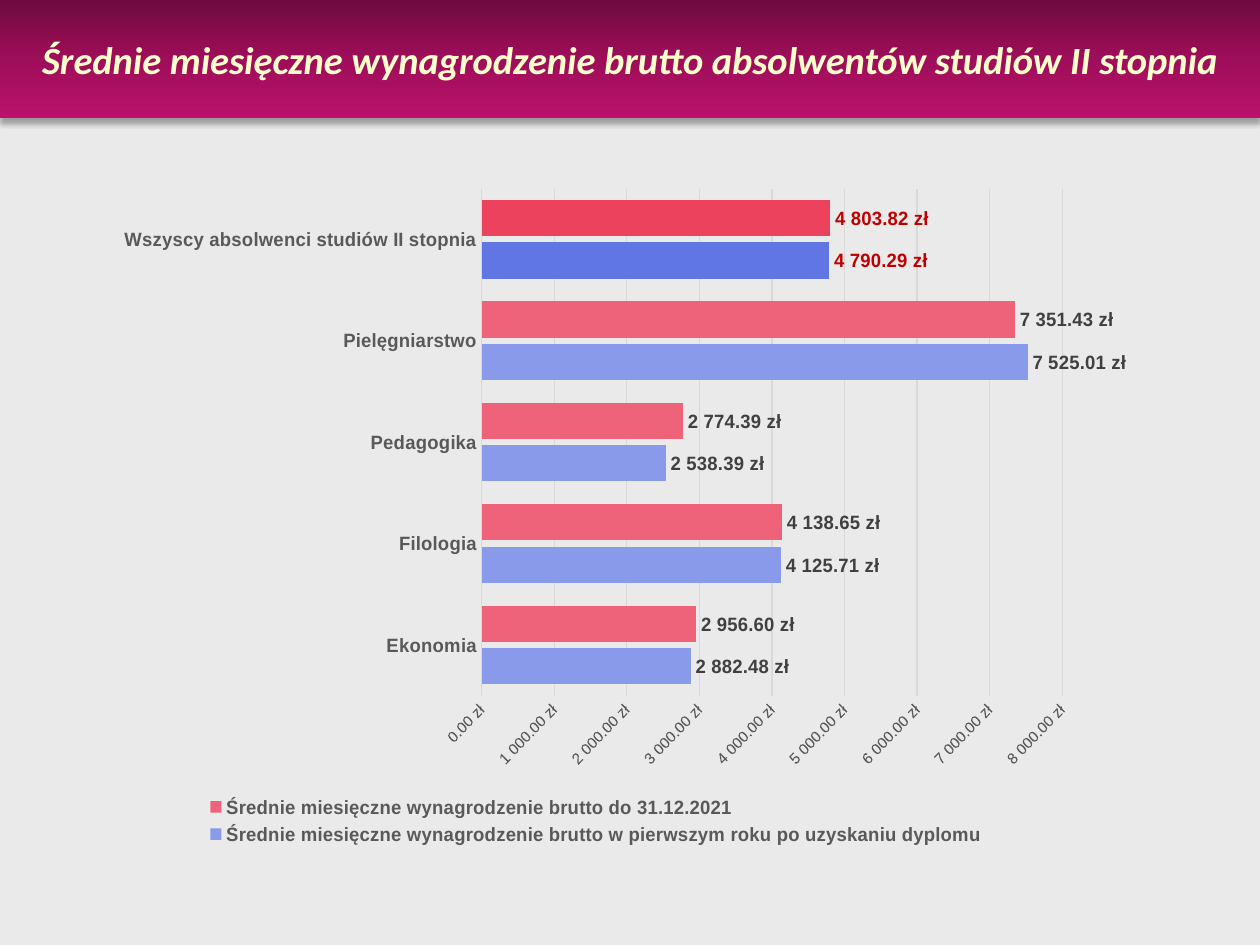
import pptx
import pptx.chart.data
import pptx.dml.color
import pptx.enum.chart
import pptx.enum.text
import pptx.oxml
import pptx.util
from pptx.util import Inches

COLORS = {
    "background": "EAEAEA",
    "banner_top": "6F0A3F",
    "banner_middle": "9E0E5A",
    "banner_bottom": "BB116B",
    "title": "FFFFCC",
    "axis_text": "595959",
    "grid": "D9D9D9",
    "label": "404040",
    "total_label": "C00000",
    "first_year": "8A9AEA",
    "first_year_total": "6076E2",
    "to_2021": "EF637A",
    "to_2021_total": "EC425E",
}
CURRENCY = '#\\ ##0.00\\ "zł"'
NAMESPACES = (
    'xmlns:a="http://schemas.openxmlformats.org/drawingml/2006/main" '
    'xmlns:c="http://schemas.openxmlformats.org/drawingml/2006/chart"'
)

TITLE = "Średnie miesięczne wynagrodzenie brutto absolwentów studiów II stopnia"
FIELDS = ["Ekonomia", "Filologia", "Pedagogika", "Pielęgniarstwo",
          "Wszyscy absolwenci studiów II stopnia"]
# name, values, colour key (the total bar uses the same key with "_total")
SALARIES = [
    ("Średnie miesięczne wynagrodzenie brutto w pierwszym roku po uzyskaniu dyplomu",
     [2882.48, 4125.71, 2538.39, 7525.01, 4790.29], "first_year"),
    ("Średnie miesięczne wynagrodzenie brutto do 31.12.2021",
     [2956.60, 4138.65, 2774.39, 7351.43, 4803.82], "to_2021"),
]


def rgb(key):
    return pptx.dml.color.RGBColor.from_string(COLORS[key])


def element(tag, attributes="", content=""):
    return pptx.oxml.parse_xml(f"<{tag} {NAMESPACES} {attributes}>{content}</{tag}>")


class SalarySlide:
    def __init__(self, presentation):
        self.slide = presentation.slides.add_slide(presentation.slide_layouts[5])
        background = self.slide.background.fill
        background.solid()
        background.fore_color.rgb = rgb("background")

    def style_font(self, font, size, color, bold=False, name="Arial"):
        font.name = name
        font.size = pptx.util.Pt(size)
        font.bold = bold
        font.color.rgb = rgb(color)

    def add_banner(self, text, left, top, width, height):
        """Turn the title placeholder into a gradient band with a shadow."""
        banner = self.slide.shapes.title
        banner.left, banner.top, banner.width, banner.height = left, top, width, height
        frame = banner.text_frame
        frame.text = text
        frame.word_wrap = True
        frame.auto_size = pptx.enum.text.MSO_AUTO_SIZE.NONE
        frame.vertical_anchor = pptx.enum.text.MSO_ANCHOR.MIDDLE
        paragraph = frame.paragraphs[0]
        paragraph.alignment = pptx.enum.text.PP_ALIGN.CENTER
        font = paragraph.runs[0].font
        self.style_font(font, 22, "title", bold=True, name="Calibri")
        font.italic = True

        stops = "".join(
            f'<a:gs pos="{position}"><a:srgbClr val="{COLORS[key]}"/></a:gs>'
            for position, key in [(0, "banner_top"), (50000, "banner_middle"),
                                  (100000, "banner_bottom")])
        properties = banner.element.spPr
        properties.append(element("a:prstGeom", 'prst="rect"', "<a:avLst/>"))
        properties.append(element(
            "a:gradFill", 'rotWithShape="1"',
            f'<a:gsLst>{stops}</a:gsLst><a:lin ang="5400000" scaled="0"/>'))
        blur, distance = pptx.util.Pt(3.5), pptx.util.Pt(2.2)
        properties.append(element(
            "a:effectLst", "",
            f'<a:outerShdw blurRad="{blur}" dist="{distance}" dir="5400000" '
            'rotWithShape="0"><a:srgbClr val="000000"><a:alpha val="32000"/>'
            "</a:srgbClr></a:outerShdw>"))

    def add_salary_chart(self, fields, salaries, left, top, width, height):
        data = pptx.chart.data.CategoryChartData(number_format=CURRENCY)
        data.categories = fields
        for name, values, _ in salaries:
            data.add_series(name, values)
        chart = self.slide.shapes.add_chart(
            pptx.enum.chart.XL_CHART_TYPE.BAR_CLUSTERED,
            left, top, width, height, data).chart
        chart.has_title = False
        chart.font.name = "Arial"
        chart.font.size = pptx.util.Pt(10)

        plot = chart.plots[0]
        plot.gap_width, plot.overlap = 63, -17
        plot.vary_by_categories = False
        for series, (_, values, color) in zip(plot.series, salaries):
            self.style_series(series, color, len(values) - 1)

        self.style_axes(chart)
        chart.has_legend = True
        chart.legend.position = pptx.enum.chart.XL_LEGEND_POSITION.BOTTOM
        chart.legend.include_in_layout = False
        self.style_font(chart.legend.font, 11, "axis_text", bold=True)

    def style_series(self, series, color, total_index):
        outside = pptx.enum.chart.XL_LABEL_POSITION.OUTSIDE_END
        total = series.points[total_index]
        for bar, key in [(series, color), (total, color + "_total")]:
            bar.format.fill.solid()
            bar.format.fill.fore_color.rgb = rgb(key)
        series.invert_if_negative = False

        labels = series.data_labels
        labels.show_value = True
        labels.position = outside
        labels.number_format = CURRENCY
        labels.number_format_is_linked = False
        self.style_font(labels.font, 11, "label", bold=True)

        self.style_font(total.data_label.font, 11, "total_label", bold=True)
        total.data_label.position = outside
        total_label = labels._element.find("{*}dLbl")
        number_format = element("c:numFmt", 'sourceLinked="0"')
        number_format.set("formatCode", CURRENCY)
        total_label.find("{*}txPr").addprevious(number_format)

    def style_axes(self, chart):
        fields, amounts = chart.category_axis, chart.value_axis
        for axis in (fields, amounts):
            axis.major_tick_mark = pptx.enum.chart.XL_TICK_MARK.NONE
            axis.minor_tick_mark = pptx.enum.chart.XL_TICK_MARK.NONE
        self.style_font(fields.tick_labels.font, 11, "axis_text", bold=True)
        self.style_font(amounts.tick_labels.font, 9, "axis_text")

        amounts.minimum_scale, amounts.maximum_scale = 0, 8000
        amounts.major_unit = 1000
        amounts.tick_labels.number_format = CURRENCY
        amounts.tick_labels.number_format_is_linked = False
        amounts.format.line.fill.background()
        amounts.has_major_gridlines = True
        for line in (fields.format.line, amounts.major_gridlines.format.line):
            line.color.rgb = rgb("grid")
            line.width = pptx.util.Pt(0.75)
        slant = amounts._element.find("{*}txPr/{*}bodyPr")
        slant.set("rot", "-2700000")
        slant.set("vert", "horz")


def main():
    presentation = pptx.Presentation()
    presentation.slide_width = Inches(10)
    presentation.slide_height = Inches(7.5)
    page = SalarySlide(presentation)
    page.add_banner(TITLE, Inches(0), Inches(0), Inches(10), Inches(0.94))
    page.add_salary_chart(FIELDS, SALARIES,
                          Inches(0.83), Inches(1.39), Inches(8.11), Inches(5.36))
    presentation.save("out.pptx")


if __name__ == "__main__":
    main()
